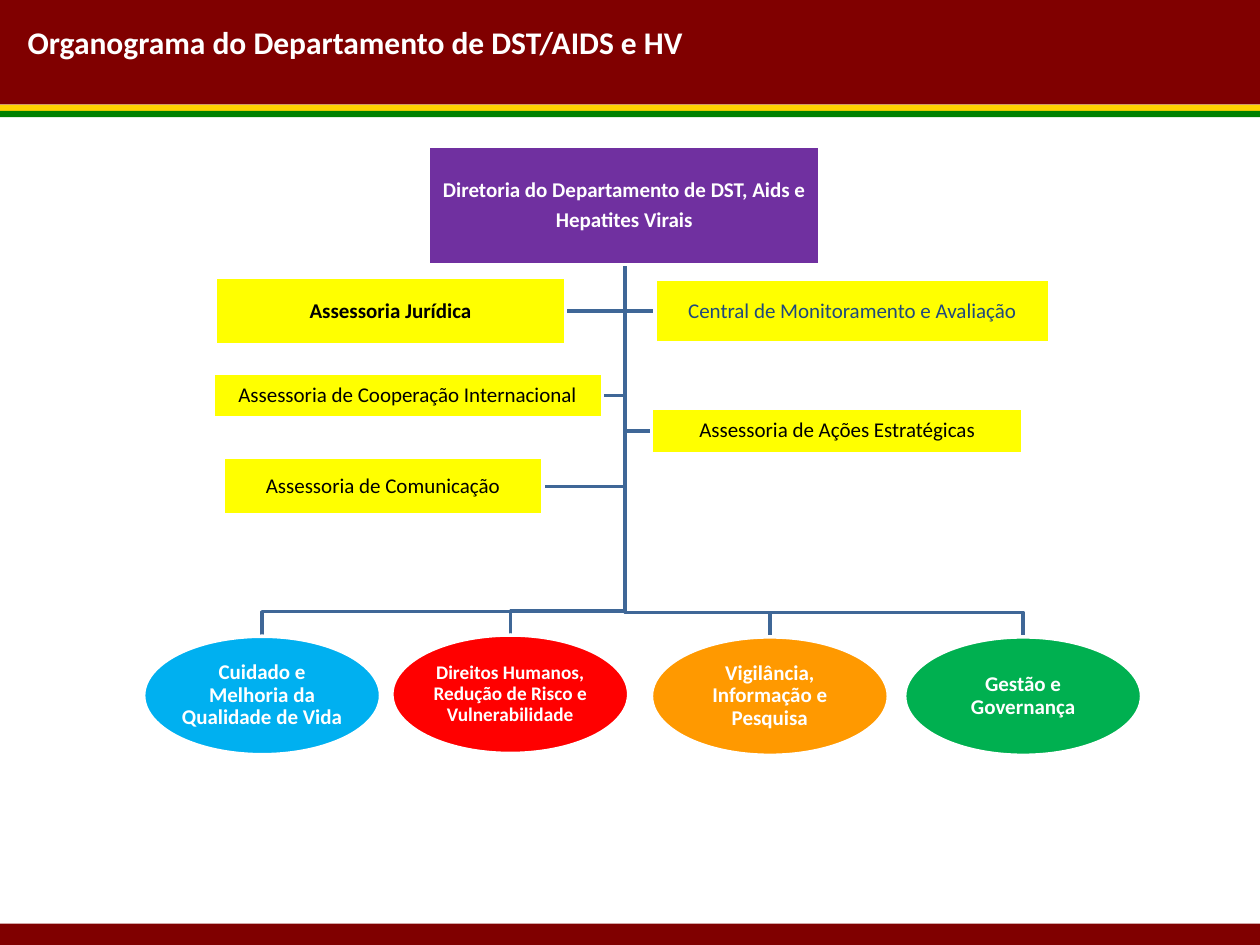
from pptx import Presentation
from pptx.dml.color import RGBColor
from pptx.enum.shapes import MSO_SHAPE as Shape
from pptx.enum.text import MSO_ANCHOR as Anchor, PP_ALIGN as Align
from pptx.util import Inches, Pt

# Grid of 100 columns by 75 rows on a 10 x 7.5 inch page
COLUMNS, ROWS = 100, 75
WIDTH, HEIGHT = Inches(10), Inches(7.5)
TRUNK = 49.6
DIRECTOR = (34, 11.6, 31.1, 9.4)
TRUNK_TOP = DIRECTOR[1] + DIRECTOR[3]
OVAL_WIDTH, OVAL_HEIGHT, BEND_GAP = 18.8, 9.4, 1.95

# Header and footer bands: top, height, colour
BANDS = [
    (8.3, 0.5, "FFD200"),
    (0, 8.3, "800000"),
    (8.8, 0.5, "008000"),
    (73.3, 1.7, "800000"),
]
# Advisory units: text, left, top, width, height, text colour, bold
ADVISORS = [
    ("Assessoria Jurídica", 17.1, 22, 27.8, 5.4, "000000", True),
    ("Central de Monitoramento e Avaliação", 52, 22.2, 31.3, 5, "1F497D", False),
    ("Assessoria de Cooperação Internacional", 16.9, 29.6, 30.9, 3.6, "000000", False),
    ("Assessoria de Ações Estratégicas", 51.7, 32.4, 29.5, 3.6, "000000", False),
    ("Assessoria de Comunicação", 17.7, 36.3, 25.4, 4.6, "000000", False),
]
# Coordination areas: text, left, top, fill, text size
AREAS = [
    ("Cuidado e Melhoria da Qualidade de Vida", 11.4, 50.5, "00B0F0", 12),
    ("Direitos Humanos, Redução de Risco e Vulnerabilidade", 31.1, 50.4, "FF0000", 11),
    ("Vigilância, Informação e Pesquisa", 51.7, 50.55, "FF9900", 12),
    ("Gestão e Governança", 71.8, 50.55, "00B050", 12),
]


def x(columns):
    return round(WIDTH * columns / COLUMNS)


def y(rows):
    return round(HEIGHT * rows / ROWS)


def colour(value):
    return RGBColor.from_string(value)


def apply(target, values):
    for name, value in values.items():
        setattr(target, name, value)


def add_text(para, text, size, text_colour, bold):
    span = para.add_run()
    span.text = text
    apply(span.font, {"name": "Calibri", "size": Pt(size), "bold": bold})
    span.font.color.rgb = colour(text_colour)


def add_block(page, kind, area, fill, outline=None):
    left, top, width, height = area
    block = page.shapes.add_shape(kind, x(left), y(top), x(width), y(height))
    block.shadow.inherit = False
    block.fill.solid()
    block.fill.fore_color.rgb = colour(fill)
    if outline:
        block.line.color.rgb = colour(outline)
        block.line.width = Pt(2)
    else:
        block.line.fill.background()
    return block


def add_unit(page, kind, area, fill, lines, size=12, text_colour="FFFFFF", bold=True):
    frame = add_block(page, kind, area, fill, "FFFFFF").text_frame
    margin = Inches(0.01)
    apply(frame, {"word_wrap": True, "vertical_anchor": Anchor.MIDDLE,
                  "margin_left": margin, "margin_right": margin,
                  "margin_top": margin, "margin_bottom": margin})
    for index, line in enumerate(lines):
        para = frame.add_paragraph() if index else frame.paragraphs[0]
        apply(para, {"alignment": Align.CENTER, "line_spacing": 0.9,
                     "space_after": Pt(round(size * 0.35, 1))})
        add_text(para, line, size, text_colour, bold)


def add_link(page, *corners):
    """Draw an open line from the foot of the director's box."""
    builder = page.shapes.build_freeform(x(TRUNK), y(TRUNK_TOP))
    builder.add_line_segments([(x(across), y(down)) for across, down in corners], close=False)
    link = builder.convert_to_shape()
    link.shadow.inherit = False
    link.fill.background()
    link.line.color.rgb = colour("3F6797")
    link.line.width = Pt(2)


def add_title(page, text):
    box = page.shapes.add_textbox(x(1.2), y(1.3), x(59.8), y(4))
    box.text_frame.word_wrap = True
    add_text(box.text_frame.paragraphs[0], text, 18, "FFFFFF", True)


def main():
    deck = Presentation()
    apply(deck, {"slide_width": WIDTH, "slide_height": HEIGHT})
    page = deck.slides.add_slide(deck.slide_layouts[6])

    # Bands
    for top, height, fill in BANDS:
        add_block(page, Shape.RECTANGLE, (0, top, COLUMNS, height), fill)

    # Links lie behind the units
    for _, left, top, width, height, *_ in reversed(ADVISORS):
        middle = top + height / 2
        edge = left if left > TRUNK else left + width
        add_link(page, (TRUNK, middle), (edge, middle))
    for _, left, top, *_ in reversed(AREAS):
        centre, bend = left + OVAL_WIDTH / 2, top - BEND_GAP
        add_link(page, (TRUNK, bend), (centre, bend), (centre, top))

    # Units
    add_unit(page, Shape.RECTANGLE, DIRECTOR, "7030A0",
             ["Diretoria do Departamento de DST, Aids e", "Hepatites Virais"])
    for text, left, top, fill, size in AREAS:
        add_unit(page, Shape.OVAL, (left, top, OVAL_WIDTH, OVAL_HEIGHT), fill, [text], size)
    for text, left, top, width, height, text_colour, bold in ADVISORS:
        add_unit(page, Shape.RECTANGLE, (left, top, width, height), "FFFF00",
                 [text], 12, text_colour, bold)

    add_title(page, "Organograma do Departamento de DST/AIDS e HV")
    deck.save("out.pptx")


if __name__ == "__main__":
    main()
